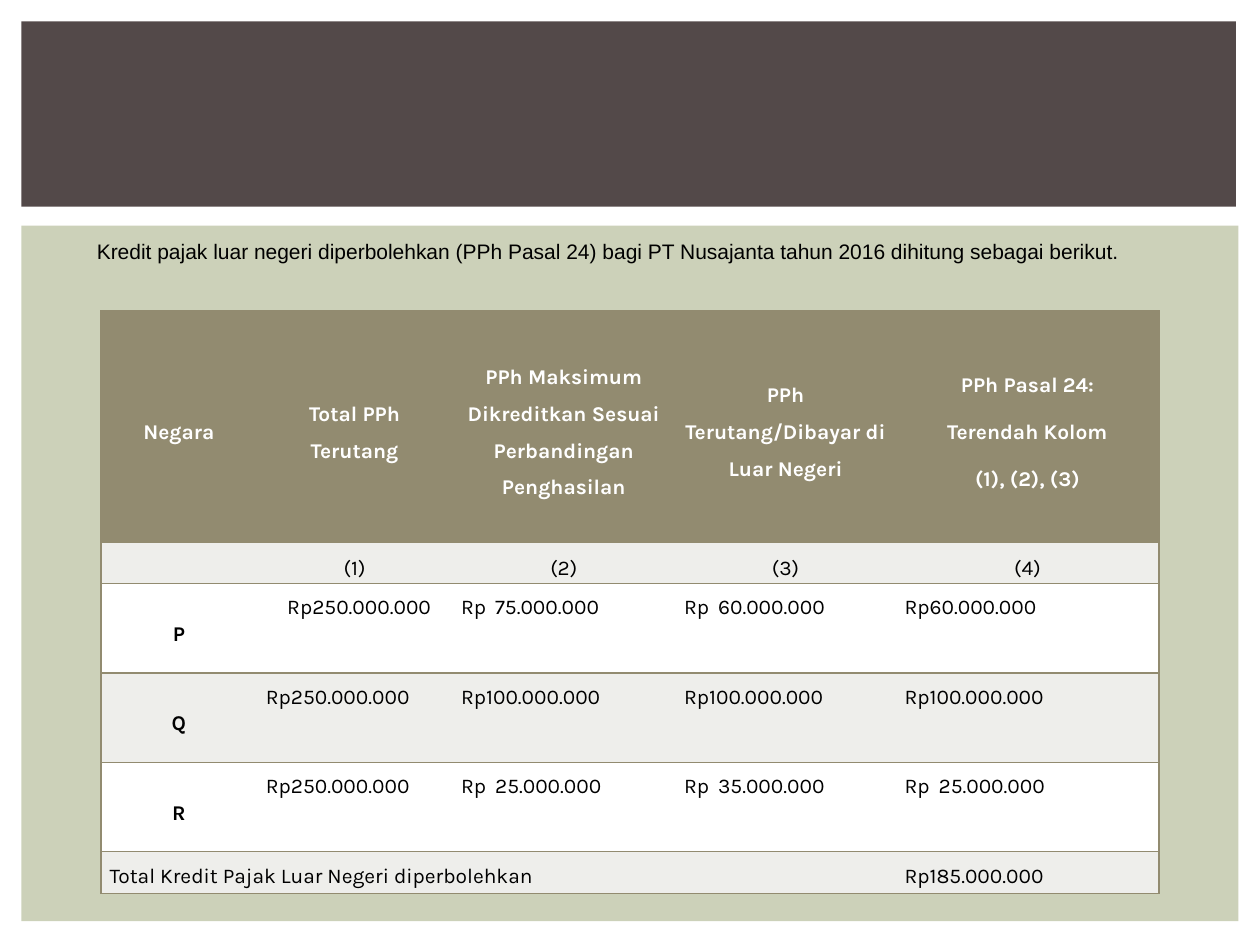
"""Build a slide with a tax credit table under a dark title band."""
import lxml.etree
import pptx
import pptx.dml.color
import pptx.enum.shapes
import pptx.enum.text
import pptx.oxml.ns
import pptx.util

Inches = pptx.util.Inches
Pt = pptx.util.Pt
RGB = pptx.dml.color.RGBColor.from_string
qn = pptx.oxml.ns.qn
ALIGN = pptx.enum.text.PP_ALIGN
ANCHOR = pptx.enum.text.MSO_ANCHOR


class Theme:
    sage = RGB("CCD1B9")
    dark = RGB("534949")
    olive = RGB("928B70")
    pale = RGB("EEEEEB")
    white = RGB("FFFFFF")
    black = RGB("000000")
    body = "Karla"
    lead = "Arial"
    size = Pt(12)
    edge = Pt(1)


def dress(item, look):
    for name, value in look.items():
        setattr(item, name, value)


def border(cell, side, shown):
    line = lxml.etree.SubElement(cell._tc.get_or_add_tcPr(), qn(f"a:ln{side}"))
    line.set("w", str(Theme.edge if shown else 0))
    if shown:
        paint = lxml.etree.SubElement(line, qn("a:solidFill"))
        lxml.etree.SubElement(paint, qn("a:srgbClr")).set("val", str(Theme.olive))
    else:
        lxml.etree.SubElement(line, qn("a:noFill"))


deck = pptx.Presentation()
dress(deck, {"slide_width": Inches(10), "slide_height": Inches(7.5)})
slide = deck.slides.add_slide(deck.slide_layouts[6])

panels = [
    ((0.17, 1.79, 9.66, 5.52), Theme.sage),
    ((0.17, 0.17, 9.64, 1.47), Theme.dark),
]
for place, color in panels:
    panel = slide.shapes.add_shape(
        pptx.enum.shapes.MSO_SHAPE.RECTANGLE, *map(Inches, place))
    panel.shadow.inherit = False
    panel.fill.solid()
    panel.fill.fore_color.rgb = color
    panel.line.fill.background()

widths = [1.24, 1.55, 1.77, 1.75, 2.09]
heights = [1.83, 0.33, 0.71, 0.71, 0.71, 0.33]
rows = [
    ["Negara", "Total PPh Terutang",
     "PPh Maksimum Dikreditkan Sesuai Perbandingan Penghasilan",
     "PPh Terutang/Dibayar di Luar Negeri",
     "PPh Pasal 24:\nTerendah Kolom\n(1), (2), (3)"],
    ["", "(1)", "(2)", "(3)", "(4)"],
    ["P", "Rp250.000.000", "Rp\t75.000.000", "Rp\t60.000.000", "Rp60.000.000"],
    ["Q", "Rp250.000.000", "Rp100.000.000", "Rp100.000.000", "Rp100.000.000"],
    ["R", "Rp250.000.000", "Rp\t25.000.000", "Rp\t35.000.000", "Rp\t25.000.000"],
    ["Total Kredit Pajak Luar Negeri diperbolehkan", "", "", "", "Rp185.000.000"],
]
last = len(rows) - 1
table = slide.shapes.add_table(
    len(rows), len(widths), Inches(0.8), Inches(2.47),
    Inches(sum(widths)), Inches(sum(heights))).table
dress(table, {"first_row": False, "horz_banding": False})
for col, width in zip(table.columns, widths):
    col.width = Inches(width)
for row, height in zip(table.rows, heights):
    row.height = Inches(height)
table.cell(last, 0).merge(table.cell(last, 3))

for r, texts in enumerate(rows):
    for c, text in enumerate(texts):
        cell = table.cell(r, c)
        mid = r < 2 or (c == 0 and r < last)
        dress(cell, {
            "margin_left": Inches(0.07), "margin_right": Inches(0.07),
            "margin_top": 0, "margin_bottom": 0,
            "vertical_anchor": ANCHOR.MIDDLE if mid else ANCHOR.TOP,
        })
        for side, shown in {"L": c == 0, "R": c == 4, "T": True, "B": True}.items():
            border(cell, side, shown)
        cell.fill.solid()
        cell.fill.fore_color.rgb = (
            Theme.olive if r == 0 else Theme.pale if r % 2 else Theme.white)
        if text:
            cell.text = text
        for para in cell.text_frame.paragraphs:
            dress(para, {
                "alignment": ALIGN.CENTER if mid else ALIGN.JUSTIFY,
                "line_spacing": 1.5, "space_after": Pt(6),
            })
            dress(para.font, {
                "name": Theme.body, "size": Theme.size,
                "bold": r == 0 or (mid and c == 0),
            })
            para.font.color.rgb = Theme.black if r else Theme.white
            if "\t" in text:
                props = para._p.get_or_add_pPr()
                stops = lxml.etree.Element(qn("a:tabLst"))
                stop = lxml.etree.SubElement(stops, qn("a:tab"))
                stop.set("pos", str(Inches(0.27)))
                stop.set("algn", "l")
                props.find(qn("a:defRPr")).addprevious(stops)
            for run in para.runs:
                dress(run.font, {
                    "name": Theme.body, "size": Theme.size, "bold": para.font.bold})
                run.font.color.rgb = para.font.color.rgb

first = table.cell(2, 1).text_frame.paragraphs[0]
first._p.get_or_add_pPr().set("indent", str(Inches(0.17)))

intro = slide.shapes.add_textbox(Inches(0), Inches(1.74), Inches(10), Inches(0.5))
dress(intro.text_frame, {"word_wrap": True, "vertical_anchor": ANCHOR.MIDDLE})
para = intro.text_frame.paragraphs[0]
para._p.get_or_add_pPr().set("indent", str(Inches(0.67)))
run = para.add_run()
run.text = ("Kredit pajak luar negeri diperbolehkan (PPh Pasal 24) bagi "
            "PT Nusajanta tahun 2016 dihitung sebagai berikut.")
dress(run.font, {"name": Theme.lead, "size": Theme.size})
run.font.color.rgb = Theme.black

deck.save("out.pptx")
